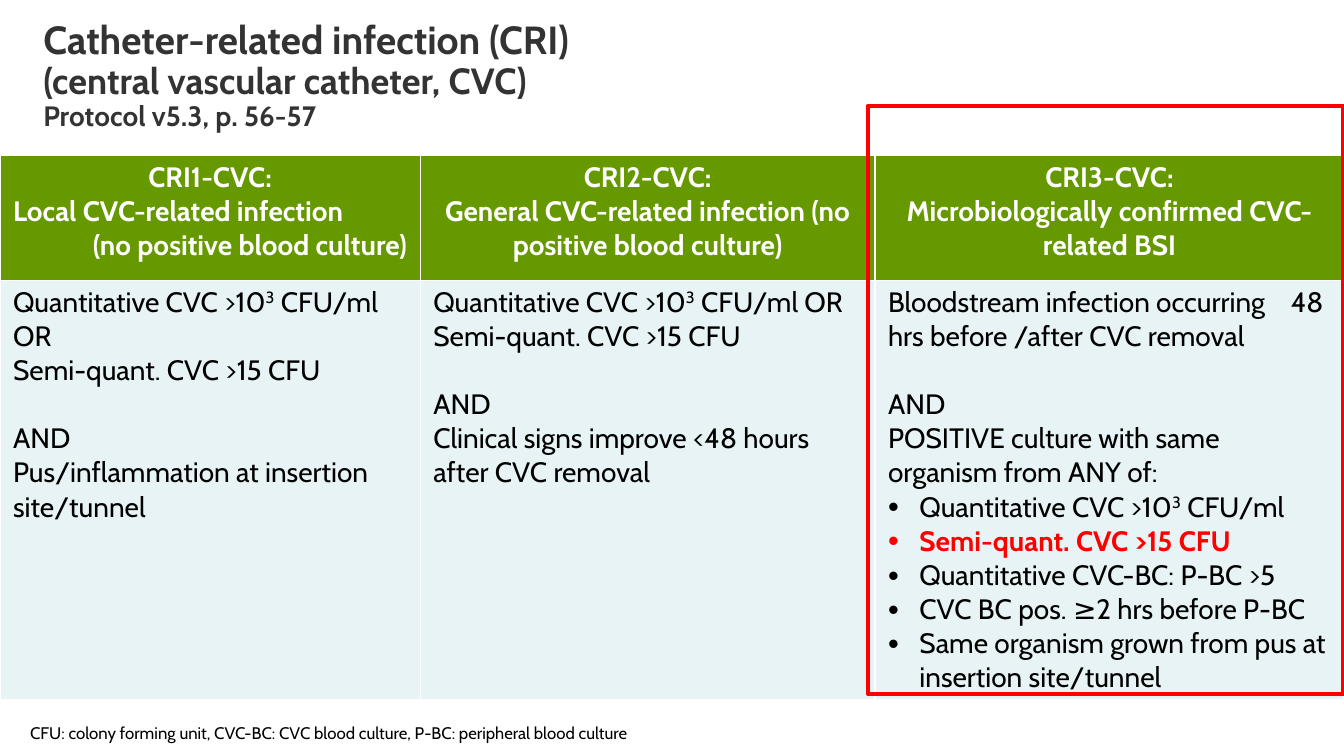
from lxml import etree
from pptx import Presentation
from pptx import util as u
from pptx.dml.color import RGBColor
from pptx.enum import shapes, text
from pptx.oxml import ns

Cm, Pt = u.Cm, u.Pt
COLORS = {"title": "333333", "head": "669900", "body": "E7F3F4",
          "white": "FFFFFF", "black": "000000", "red": "FF0000"}
FONT = "Cabin"
ALIGN = text.PP_ALIGN
AND_GAP = 24.3
INDENT = Cm(0.79)
TAB = Cm(10.15)

TITLE = [("Catheter-related infection (CRI)", 28),
         ("(central vascular catheter, CVC)", 26),
         ("Protocol v5.3, p. 56-57", 20)]
QUANTITATIVE = "Quantitative CVC >10^3^ CFU/ml"
SEMI = "Semi-quant. CVC >15 CFU"
AND = ("AND", {"before": AND_GAP})
BULLET = {"bullet": True}

HEADS = [
    [("CRI1-CVC:", {}),
     ("Local CVC-related infection", {"align": ALIGN.LEFT}),
     ("(no positive blood culture)", {"align": ALIGN.RIGHT})],
    [("CRI2-CVC:", {}),
     ("General CVC-related infection (no positive blood culture)", {})],
    [("CRI3-CVC:", {}),
     ("Microbiologically confirmed CVC-related BSI", {})],
]
BODIES = [
    [(QUANTITATIVE + " OR", {}), (SEMI, {}), AND,
     ("Pus/inflammation at insertion site/tunnel", {})],
    [(QUANTITATIVE + " OR", {}), (SEMI, {}), AND,
     ("Clinical signs improve <48 hours after CVC removal", {})],
    [("Bloodstream infection occurring\t48 hrs before /after CVC removal",
      {"tab": TAB}), AND,
     ("POSITIVE culture with same organism from ANY of:", {}),
     (QUANTITATIVE, BULLET),
     (SEMI, {"bullet": True, "color": "red", "bold": True}),
     ("Quantitative CVC-BC: P-BC >5", BULLET),
     ("CVC BC pos. ≥2 hrs before P-BC", BULLET),
     ("Same organism grown from pus at insertion site/tunnel", BULLET)],
]


def rgb(name):
    """Return the named colour."""
    return RGBColor.from_string(COLORS[name])


def add_bullet(p):
    """Give a paragraph a hanging round bullet."""
    pPr = p._p.get_or_add_pPr()
    pPr.set("marL", str(INDENT))
    pPr.set("indent", str(-INDENT))
    etree.SubElement(pPr, ns.qn("a:buSzPct"), val="110000")
    etree.SubElement(pPr, ns.qn("a:buFont"), typeface="Arial")
    etree.SubElement(pPr, ns.qn("a:buChar"), char="•")


def add_tab(p, pos):
    """Give a paragraph a left tab stop."""
    tabs = etree.SubElement(p._p.get_or_add_pPr(), ns.qn("a:tabLst"))
    etree.SubElement(tabs, ns.qn("a:tab"), pos=str(pos), algn="l")


def write(tf, words, size=20, color="black", bold=False, align=ALIGN.LEFT,
          before=0, spacing=None, bullet=False, tab=None):
    """Add a formatted paragraph, with superscripts between carets."""
    p = tf.paragraphs[0]
    if p.runs:
        p = tf.add_paragraph()
    if bullet:
        add_bullet(p)
    if tab:
        add_tab(p, tab)
    p.alignment = align
    if before:
        p.space_before = Pt(before)
    if spacing:
        p.line_spacing = spacing
    for i, part in enumerate(words.split("^")):
        r = p.add_run()
        r.text = part
        r.font.name, r.font.size, r.font.bold = FONT, Pt(size), bold
        r.font.color.rgb = rgb(color)
        if i % 2:
            r._r.get_or_add_rPr().set("baseline", "30000")


def add_title(s, left, top, width, height):
    """Place the three-line title."""
    sp = s.shapes.title
    sp.left, sp.top, sp.width, sp.height = left, top, width, height
    tf = sp.text_frame
    tf.margin_left = tf.margin_right = tf.margin_top = tf.margin_bottom = 0
    tf.vertical_anchor = text.MSO_ANCHOR.TOP
    tf.auto_size = text.MSO_AUTO_SIZE.NONE
    tf.word_wrap = True
    for line, size in TITLE:
        write(tf, line, size=size, color="title", bold=True, spacing=0.9)


def fill_cell(cell, fill, paragraphs, **base):
    """Colour a cell and write its paragraphs."""
    cell.fill.solid()
    cell.fill.fore_color.rgb = rgb(fill)
    cell.margin_left = cell.margin_right = Cm(0.33)
    cell.margin_top = cell.margin_bottom = Cm(0.13)
    for words, fmt in paragraphs:
        write(cell.text_frame, words, **{**base, **fmt})


def add_criteria(s, left, top, width, height):
    """Place the table of the three infection definitions."""
    head = Cm(3.15)
    table = s.shapes.add_table(2, 3, left, top, width, height).table
    table.horz_banding = False
    table.rows[0].height, table.rows[1].height = head, height - head
    first, second = Cm(10.59), Cm(11.46)
    for col, w in zip(table.columns, (first, second, width - first - second)):
        col.width = w
    for i, (title, body) in enumerate(zip(HEADS, BODIES)):
        fill_cell(table.cell(0, i), "head", title, color="white", bold=True,
                  align=ALIGN.CENTER)
        fill_cell(table.cell(1, i), "body", body)


def add_footnote(s, left, top, width, height):
    """Place the list of abbreviations."""
    tf = s.shapes.add_textbox(left, top, width, height).text_frame
    tf.word_wrap = True
    write(tf, "CFU: colony forming unit, CVC-BC: CVC blood culture, "
          "P-BC: peripheral blood culture", size=12, spacing=0.9)


def add_highlight(s, left, top, width, height):
    """Place the red frame around the third definition."""
    sp = s.shapes.add_shape(shapes.MSO_SHAPE.RECTANGLE, left, top, width, height)
    sp.shadow.inherit = False
    sp.fill.background()
    sp.line.color.rgb = rgb("red")
    sp.line.width = Pt(3)


def main():
    """Build and save the slide."""
    prs = Presentation()
    prs.slide_width, prs.slide_height = Cm(33.87), Cm(19.05)
    s = prs.slides.add_slide(prs.slide_layouts[5])
    add_title(s, Cm(1.09), Cm(0.51), Cm(30.48), Cm(3.18))
    add_criteria(s, 0, Cm(3.91), prs.slide_width, Cm(13.56))
    add_footnote(s, Cm(0.51), Cm(18.14), Cm(33.35), Cm(0.71))
    add_highlight(s, Cm(21.87), Cm(2.67), Cm(11.99), Cm(14.81))
    prs.save("out.pptx")


if __name__ == "__main__":
    main()
